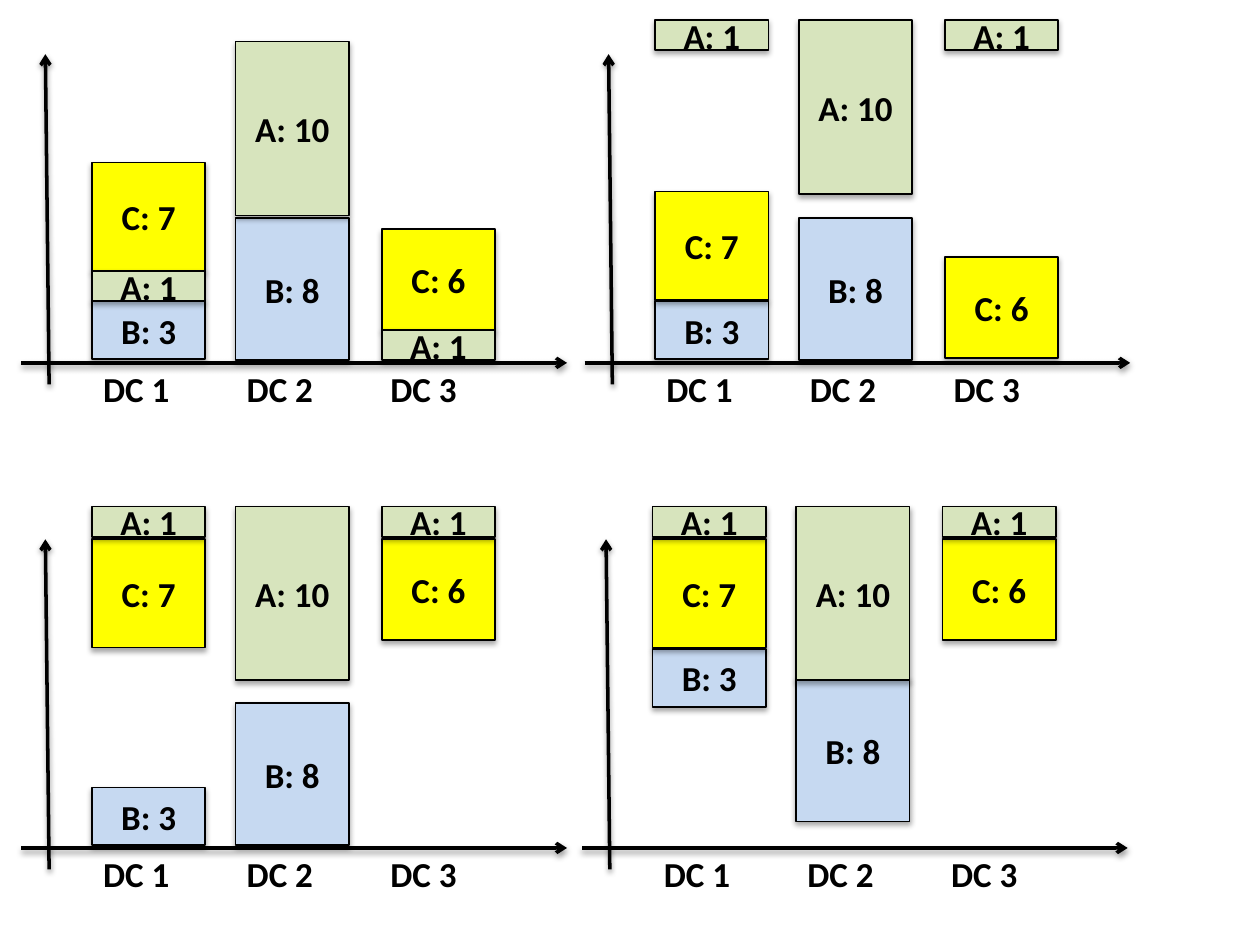
"""Build a slide of four stacked-bar panels showing loads A, B and C at three DCs."""
import pptx
import pptx.dml.color
import pptx.enum.shapes
import pptx.enum.text
import pptx.oxml
import pptx.oxml.ns
import pptx.util

Inches = pptx.util.Inches
RGB = pptx.dml.color.RGBColor
BLACK = RGB(0x00, 0x00, 0x00)
GREEN = RGB(0xD7, 0xE4, 0xBD)
BLUE = RGB(0xC6, 0xD9, 0xF1)
YELLOW = RGB(0xFF, 0xFF, 0x00)
HUES = {"A": GREEN, "B": BLUE, "C": YELLOW}

FONT = {"name": "Calibri", "size": pptx.util.Pt(20), "bold": True}
CENTER = {"alignment": pptx.enum.text.PP_ALIGN.CENTER}
MIDDLE = {"vertical_anchor": pptx.enum.text.MSO_ANCHOR.MIDDLE, "word_wrap": True}
LABEL = {"word_wrap": True, "auto_size": pptx.enum.text.MSO_AUTO_SIZE.SHAPE_TO_FIT_TEXT}

WIDE = 0.9
LEFTS = (0.73, 1.87, 3.03)
LABELS = (("DC 1", 0.72), ("DC 2", 1.86), ("DC 3", 3))
AXES = ((0.39, 3.05, 0.36, 0.43), (0.17, 2.88, 4.5, 2.88))
BARS = (
    ("B: 3", 0, 0.46), ("C: 7", 0, 0.86), ("B: 8", 1, 1.13), ("A: 10", 1, 1.38),
    ("A: 1", 0, 0.24), ("C: 6", 2, 0.8), ("A: 1", 2, 0.24),
)
PANELS = (
    (0, 0, (2.39, 1.29, 1.73, 0.33, 2.15, 1.82, 2.62)),
    (4.47, 0, (2.39, 1.52, 1.73, 0.16, 0.16, 2.04, 0.16)),
    (0, 3.85, (6.25, 4.28, 5.58, 4.02, 4.02, 4.28, 4.02)),
    (4.45, 3.85, (5.15, 4.28, 5.39, 4.02, 4.02, 4.28, 4.02)),
)


def apply(item, look):
    """Set each attribute in look on item."""
    for key, value in look.items():
        setattr(item, key, value)


def add_xml(node, tag, body):
    """Append a drawing element with the given start and content."""
    node.append(pptx.oxml.parse_xml(
        f"<a:{tag} {pptx.oxml.ns.nsdecls('a')} {body}"))


def add_shadow(shape, dist, alpha):
    """Give the shape a soft black shadow falling straight down."""
    add_xml(shape._element.spPr, "effectLst",
            f'><a:outerShdw blurRad="40000" dist="{dist}" dir="5400000" rotWithShape="0">'
            f'<a:srgbClr val="000000"><a:alpha val="{alpha}"/></a:srgbClr>'
            '</a:outerShdw></a:effectLst>')


def write(shape, text, look, para):
    """Put bold black text in the shape."""
    frame = shape.text_frame
    apply(frame, look)
    line = frame.paragraphs[0]
    apply(line, para)
    run = line.add_run()
    run.text = text
    apply(run.font, FONT)
    run.font.color.rgb = BLACK


def draw_line(shape, width):
    """Outline the shape in black."""
    shape.line.color.rgb = BLACK
    shape.line.width = pptx.util.Pt(width)


def add_axis(group, *ends):
    """Add an arrow from the first point to the second."""
    kind = pptx.enum.shapes.MSO_CONNECTOR.STRAIGHT
    axis = group.shapes.add_connector(kind, *map(Inches, ends))
    draw_line(axis, 2)
    add_xml(axis.line._get_or_add_ln(), "tailEnd", 'type="arrow"/>')
    add_shadow(axis, 20000, 38000)


def add_bar(group, text, left, top, height):
    """Add a block coloured by the letter it starts with."""
    kind = pptx.enum.shapes.MSO_SHAPE.RECTANGLE
    bar = group.shapes.add_shape(kind, *map(Inches, (left, top, WIDE, height)))
    bar.fill.solid()
    bar.fill.fore_color.rgb = HUES[text[0]]
    draw_line(bar, 1)
    add_shadow(bar, 23000, 35000)
    write(bar, text, MIDDLE, CENTER)


def add_label(group, text, left, top):
    """Add a name below the axis."""
    box = group.shapes.add_textbox(*map(Inches, (left, top, 0.93, 0.29)))
    write(box, text, LABEL, {})


def add_panel(slide, dx, dy, tops):
    """Add one group of axes, bars and labels."""
    group = slide.shapes.add_group_shape()
    for x1, y1, x2, y2 in AXES:
        add_axis(group, x1 + dx, y1 + dy, x2 + dx, y2 + dy)
    for (text, col, height), top in zip(BARS, tops):
        add_bar(group, text, LEFTS[col] + dx, top, height)
    for text, left in LABELS:
        add_label(group, text, left + dx, 2.87 + dy)


def main():
    """Build and save the slide."""
    deck = pptx.Presentation()
    apply(deck, {"slide_width": Inches(10), "slide_height": Inches(7.5)})
    slide = deck.slides.add_slide(deck.slide_layouts[6])
    for panel in PANELS:
        add_panel(slide, *panel)
    deck.save("out.pptx")


if __name__ == "__main__":
    main()
